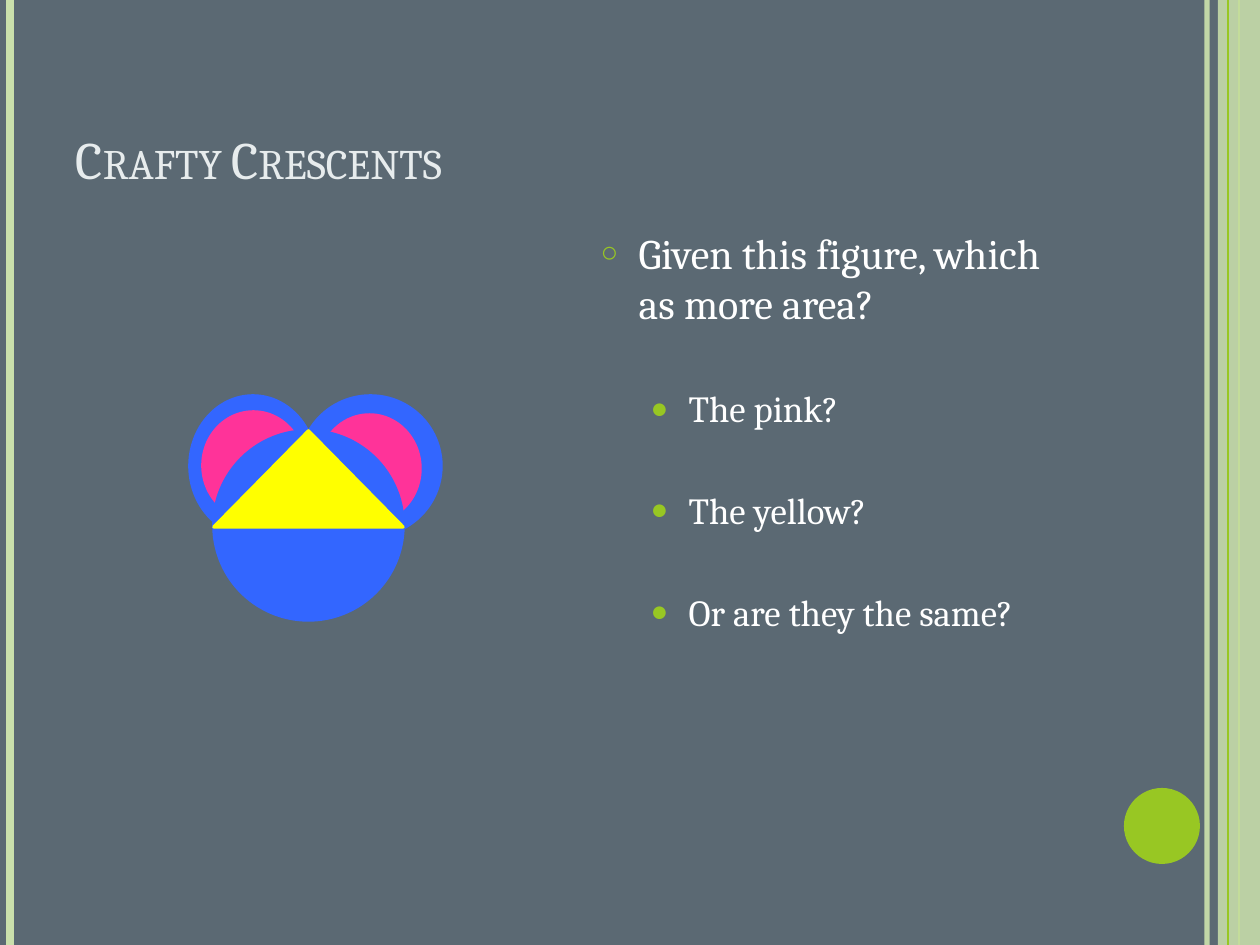
from typing import NamedTuple

from lxml import etree
from pptx import Presentation
from pptx.dml.color import RGBColor
from pptx.enum.shapes import MSO_CONNECTOR, MSO_SHAPE
from pptx.enum.text import MSO_ANCHOR, MSO_AUTO_SIZE, PP_ALIGN
from pptx.oxml.ns import qn
from pptx.util import Emu, Pt

OVAL = MSO_SHAPE.OVAL
RECT = MSO_SHAPE.RECTANGLE
PEAK = MSO_SHAPE.ISOSCELES_TRIANGLE
LINE = MSO_CONNECTOR.STRAIGHT
LEFT = PP_ALIGN.LEFT
TOP, BOTTOM = MSO_ANCHOR.TOP, MSO_ANCHOR.BOTTOM
NO_FIT = MSO_AUTO_SIZE.NONE

SCALE = 914400 / 126  # EMU per px
WIDE, HIGH = 1260, 945
FONT = "Cambria"
HANG = 38  # bullet to text, px
HEX = {
    "back": "5B6973", "title": "E7ECED", "text": "FFFFFF", "pale": "CAE0AC",
    "green": "98C723", "blue": "3366FF", "pink": "FF3399", "yellow": "FFFF00",
}


class Stripe(NamedTuple):
    x: int
    color: str
    width: float
    alpha: int = 100


class Form(NamedTuple):
    kind: MSO_SHAPE
    box: tuple[int, int, int, int]
    color: str
    edge: float = 0
    alpha: int = 100


class Item(NamedTuple):
    text: str
    level: int
    size: int
    before: int
    left: int
    mark: str
    ratio: int  # bullet size, percent


def px(num: float) -> Emu:
    return Emu(round(num * SCALE))


def rgb(name: str) -> RGBColor:
    return RGBColor.from_string(HEX[name])


def fade(root, alpha: int) -> None:
    """Make every colour below root see-through."""
    if alpha < 100:
        for node in root.iter(qn("a:srgbClr")):
            etree.SubElement(node, qn("a:alpha"), val=str(alpha * 1000))


def draw_line(slide, line: Stripe) -> None:
    x = px(line.x)
    rule = slide.shapes.add_connector(LINE, x, 0, x, px(HIGH))
    rule.line.color.rgb = rgb(line.color)
    rule.line.width = Pt(line.width)
    props = rule.line._get_or_add_ln().getparent()
    fade(props, line.alpha)
    etree.SubElement(props, qn("a:effectLst"))


def draw_form(slide, form: Form) -> None:
    shape = slide.shapes.add_shape(form.kind, *map(px, form.box))
    shape.shadow.inherit = False
    shape.fill.solid()
    shape.fill.fore_color.rgb = rgb(form.color)
    if form.edge:
        shape.line.color.rgb = rgb(form.color)
        shape.line.width = Pt(form.edge)
    else:
        shape.line.fill.background()
    fade(shape.element.spPr, form.alpha)


def place(holder, box: tuple[int, int, int, int], anchor: MSO_ANCHOR):
    """Move a placeholder and return its text frame."""
    holder.left, holder.top, holder.width, holder.height = map(px, box)
    frame = holder.text_frame
    frame.word_wrap = True
    frame.auto_size = NO_FIT
    frame.vertical_anchor = anchor
    return frame


def write(para, text: str, *, size: int, color: str, caps: bool = False,
          before: int = 0, level: int = 0) -> None:
    para.alignment = LEFT
    para.level = level
    para.space_before = Pt(before)
    run = para.add_run()
    run.text = text
    run.font.name = FONT
    run.font.size = Pt(size)
    run.font.color.rgb = rgb(color)
    if caps:
        run.font._element.set("cap", "small")


def add_mark(para, item: Item) -> None:
    props = para._p.get_or_add_pPr()
    props.set("marL", str(px(item.left)))
    props.set("indent", str(-px(HANG)))
    tint = etree.SubElement(props, qn("a:buClr"))
    etree.SubElement(tint, qn("a:srgbClr"), val=HEX["green"])
    etree.SubElement(props, qn("a:buSzPct"), val=str(item.ratio * 1000))
    etree.SubElement(props, qn("a:buChar"), char=item.mark)


STRIPES = [Stripe(1207, "pale", 3, 93), Stripe(10, "pale", 4.5),
           Stripe(1239, "green", 1.5)]
BAND = Form(RECT, (1218, 0, 42, HIGH), "pale", alpha=87)
EDGE = Stripe(1228, "green", 0.75)
DOT = Form(OVAL, (1124, 788, 76, 76), "green")

# Crescents on two sides of a triangle set in a circle
FIGURE = [
    Form(OVAL, (190, 396, 126, 140), "blue", 2),
    Form(OVAL, (300, 396, 141, 140), "blue", 2),
    Form(OVAL, (319, 415, 101, 107), "pink", 2),
    Form(OVAL, (203, 412, 101, 107), "pink", 2),
    Form(OVAL, (214, 431, 189, 189), "blue", 2),
    Form(PEAK, (214, 431, 189, 96), "yellow", 2),
]

ASK = Item("Given this figure, which as more area?", 0, 24, 6, HANG, "○", 70)
CHOICES = [Item(text, 1, 21, 33, 88, "●", 80)
           for text in ("The pink?", "The yellow?", "Or are they the same?")]


def main() -> None:
    deck = Presentation()
    deck.slide_width, deck.slide_height = px(WIDE), px(HIGH)
    slide = deck.slides.add_slide(deck.slide_layouts[1])
    slide.background.fill.solid()
    slide.background.fill.fore_color.rgb = rgb("back")

    # Side decoration
    for line in STRIPES:
        draw_line(slide, line)
    draw_form(slide, BAND)
    draw_line(slide, EDGE)
    draw_form(slide, DOT)

    # Title and question
    head = place(slide.shapes.title, (63, 38, 1029, 158), BOTTOM)
    write(head.paragraphs[0], "Crafty Crescents", size=30, color="title",
          caps=True)
    body = place(slide.placeholders[1], (588, 221, 504, 630), TOP)
    for num, item in enumerate([ASK, *CHOICES]):
        para = body.add_paragraph() if num else body.paragraphs[0]
        write(para, item.text, size=item.size, color="text",
              before=item.before, level=item.level)
        add_mark(para, item)

    # Figure
    for form in FIGURE:
        draw_form(slide, form)

    deck.save("out.pptx")


if __name__ == "__main__":
    main()
